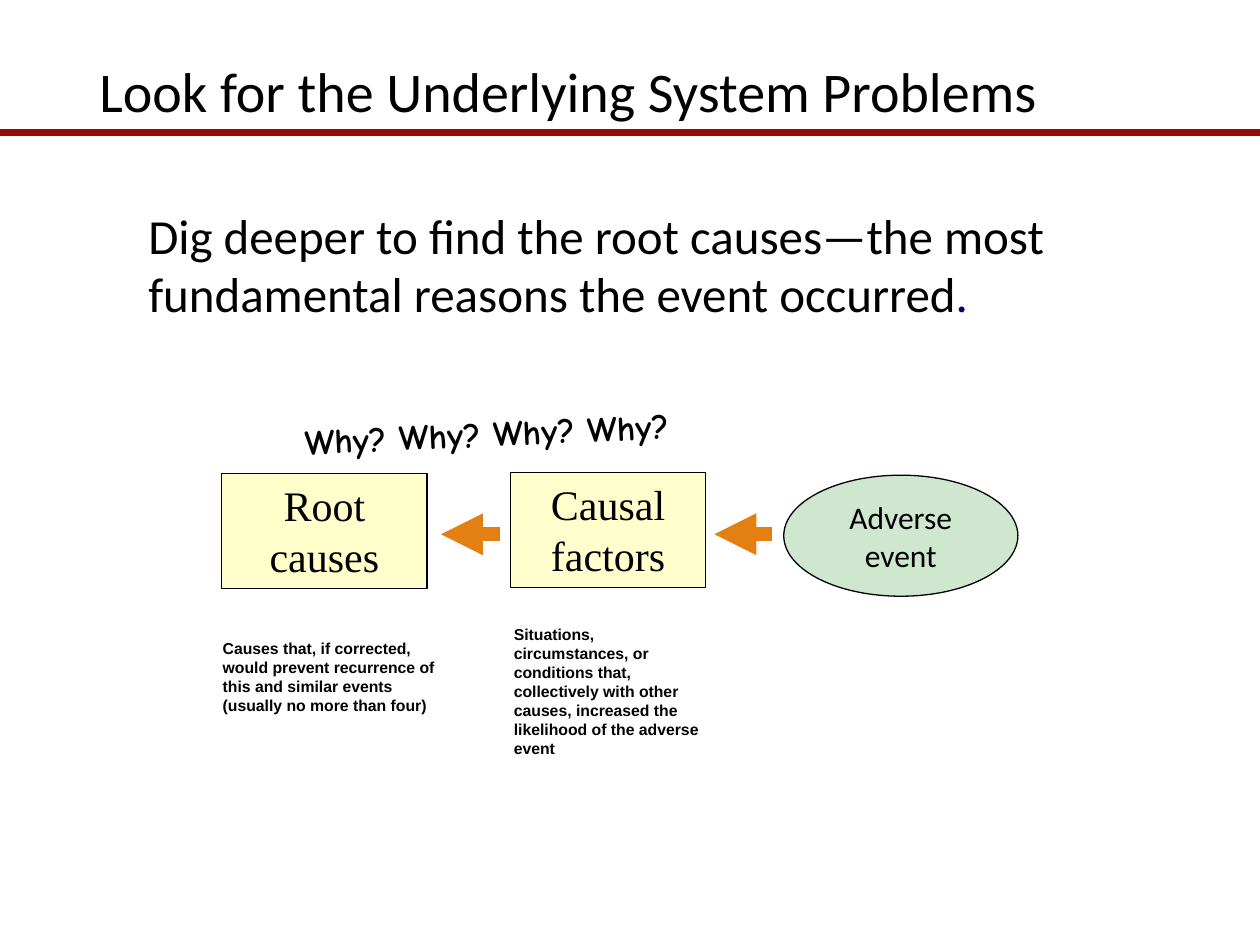
from dataclasses import dataclass

from lxml import etree
from pptx import Presentation
from pptx.dml.color import RGBColor
from pptx.enum.shapes import MSO_CONNECTOR, MSO_SHAPE
from pptx.enum.text import MSO_ANCHOR, MSO_AUTO_SIZE, PP_ALIGN
from pptx.oxml.ns import qn
from pptx.util import Cm, Pt

RECT, OVAL = MSO_SHAPE.RECTANGLE, MSO_SHAPE.OVAL
STRAIGHT = MSO_CONNECTOR.STRAIGHT
TOP, MIDDLE = MSO_ANCHOR.TOP, MSO_ANCHOR.MIDDLE
LEFT, CENTER = PP_ALIGN.LEFT, PP_ALIGN.CENTER

COLORS = {
    "text": "000000",
    "rule": "9B0A0A",
    "cause": "FFFFCC",
    "event": "CFE7CF",
    "arrow": "E48012",
    "period": "000066",
}
SLIDE_WIDTH, SLIDE_HEIGHT = 25.4, 19.05
RULE_Y = 2.67
ARROW_Y = 10.77


@dataclass
class Box:
    left: float
    top: float
    width: float
    height: float

    def lengths(self) -> list:
        return [Cm(v) for v in (self.left, self.top, self.width, self.height)]


@dataclass
class Style:
    font: str
    size: float
    bold: bool = False
    align: PP_ALIGN = LEFT
    anchor: MSO_ANCHOR = TOP
    wrap: bool = True


@dataclass
class Stage:
    box: Box
    geometry: MSO_SHAPE
    fill: str
    lines: list[str]
    style: Style
    opacity: int = 100


@dataclass
class Label:
    box: Box
    lines: list[str]
    style: Style
    rotation: float = 0


TITLE_STYLE = Style("Calibri", 32)
BODY_STYLE = Style("Calibri", 28)
CAUSE_STYLE = Style("Times New Roman", 24, align=CENTER)
EVENT_STYLE = Style("Calibri", 18, align=CENTER, anchor=MIDDLE, wrap=False)
NOTE_STYLE = Style("Arial", 9, bold=True)
WHY_STYLE = Style("Comic Neue", 20, bold=True, align=CENTER, wrap=False)

STAGES = [
    Stage(Box(4.47, 9.55, 4.14, 2.31), RECT, "cause", ["Root causes"], CAUSE_STYLE),
    Stage(Box(10.29, 9.53, 3.94, 2.31), RECT, "cause", ["Causal factors"], CAUSE_STYLE, 97),
    Stage(Box(15.8, 9.58, 4.72, 2.44), OVAL, "event", ["Adverse", "event"], EVENT_STYLE),
]
LABELS = [
    Label(
        Box(4.24, 12.75, 5.11, 1.8),
        [
            "Causes that, if corrected, would prevent recurrence of this and similar events",
            "(usually no more than four)",
        ],
        NOTE_STYLE,
    ),
    Label(
        Box(10.11, 12.47, 4.5, 2.57),
        [
            "Situations, circumstances, or conditions that, collectively with other causes, "
            "increased the likelihood of the adverse event"
        ],
        NOTE_STYLE,
    ),
    Label(Box(8.15, 8.18, 3.35, 1.6), ["Why? Why? Why? Why?"], WHY_STYLE, -2.6),
]
ARROWS = [(15.57, 14.4), (10.08, 8.89)]


def rgb(name: str) -> RGBColor:
    return RGBColor.from_string(COLORS[name])


def write(frame, lines: list[str], style: Style) -> None:
    frame.text = "\n".join(lines)
    frame.auto_size = MSO_AUTO_SIZE.NONE
    frame.word_wrap = style.wrap
    frame.vertical_anchor = style.anchor
    for paragraph in frame.paragraphs:
        paragraph.alignment = style.align
        paragraph.font.name = style.font
        paragraph.font.size = Pt(style.size)
        paragraph.font.bold = style.bold
        paragraph.font.color.rgb = rgb("text")


def add_line(slide, start: tuple, end: tuple, color: str, width: float, arrow: bool = False):
    line = slide.shapes.add_connector(STRAIGHT, *(Cm(v) for v in start + end))
    line.line.color.rgb = rgb(color)
    line.line.width = Pt(width)
    properties = line._element.spPr
    if arrow:
        etree.SubElement(properties.find(qn("a:ln")), qn("a:tailEnd"), type="triangle")
    etree.SubElement(properties, qn("a:effectLst"))


def add_stage(slide, stage: Stage) -> None:
    shape = slide.shapes.add_shape(stage.geometry, *stage.box.lengths())
    shape.shadow.inherit = False
    shape.fill.solid()
    shape.fill.fore_color.rgb = rgb(stage.fill)
    if stage.opacity < 100:
        color = shape._element.spPr.find(qn("a:solidFill")).find(qn("a:srgbClr"))
        etree.SubElement(color, qn("a:alpha"), val=str(stage.opacity * 1000))
    shape.line.color.rgb = rgb("text")
    shape.line.width = Pt(0.75)
    write(shape.text_frame, stage.lines, stage.style)


def add_label(slide, label: Label):
    textbox = slide.shapes.add_textbox(*label.box.lengths())
    textbox.rotation = label.rotation
    write(textbox.text_frame, label.lines, label.style)
    return textbox


def main() -> None:
    prs = Presentation()
    prs.slide_width, prs.slide_height = Cm(SLIDE_WIDTH), Cm(SLIDE_HEIGHT)
    slide = prs.slides.add_slide(prs.slide_layouts[5])

    title = slide.shapes.title
    title.left, title.top, title.width, title.height = Box(1.75, 1.02, 21.89, 3.68).lengths()
    write(title.text_frame, ["Look for the Underlying System Problems"], TITLE_STYLE)
    add_line(slide, (0, RULE_Y), (SLIDE_WIDTH, RULE_Y), "rule", 3.75)

    for stage in STAGES:
        add_stage(slide, stage)
    for label in LABELS:
        add_label(slide, label)
    for start, end in ARROWS:
        add_line(slide, (start, ARROW_Y), (end, ARROW_Y), "arrow", 8, arrow=True)

    message = "Dig deeper to find the root causes—the most fundamental reasons the event occurred"
    body = add_label(slide, Label(Box(2.74, 4.01, 20.96, 2.74), [message], BODY_STYLE))
    period = body.text_frame.paragraphs[0].add_run()
    period.text = "."
    period.font.color.rgb = rgb("period")

    prs.save("out.pptx")


if __name__ == "__main__":
    main()
